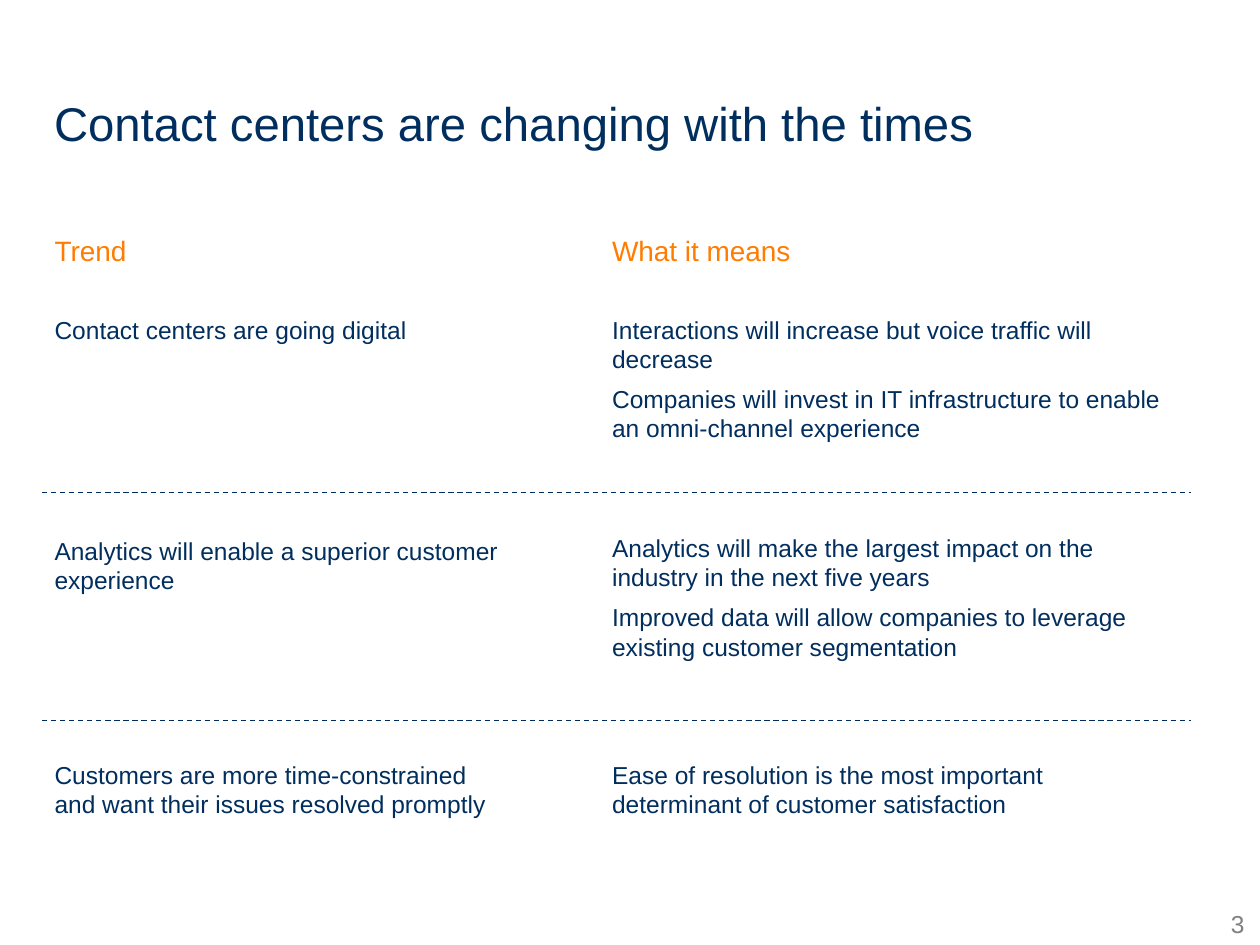
from lxml import etree
from pptx import Presentation
from pptx.dml.color import RGBColor
from pptx.enum.dml import MSO_LINE
from pptx.enum.shapes import MSO_CONNECTOR
from pptx.enum.text import MSO_ANCHOR, PP_ALIGN
from pptx.oxml.ns import qn
from pptx.util import Cm, Pt

DASH = MSO_LINE.DASH
LINE = MSO_CONNECTOR.STRAIGHT
TOP = MSO_ANCHOR.TOP
LEFT, RIGHT = PP_ALIGN.LEFT, PP_ALIGN.RIGHT
NAVY, ORANGE, GREY = "002E5E", "FF7C00", "808080"


def color(code):
    return RGBColor.from_string(code)


def assign(item, values):
    for name, value in values.items():
        setattr(item, name, value)


class Deck:
    font = "Arial"
    rule = "002D5E"

    def __init__(self, width, height):
        self.file = Presentation()
        assign(self.file, {"slide_width": Cm(width), "slide_height": Cm(height)})
        self.slide = self.file.slides.add_slide(self.file.slide_layouts[6])

    def text(self, area, items, size, tint, pitch=None, align=LEFT, wrap=True, inset=None):
        box = self.slide.shapes.add_textbox(*map(Cm, area))
        frame = box.text_frame
        assign(frame, {"word_wrap": wrap, "vertical_anchor": TOP})
        if inset is not None:
            sides = ("left", "top", "right", "bottom")
            assign(frame, {f"margin_{side}": Cm(inset) for side in sides})
        for index, (gap, words) in enumerate(items):
            para = frame.paragraphs[0] if index == 0 else frame.add_paragraph()
            para.text = words
            assign(para, {"alignment": align, "line_spacing": pitch, "space_before": Pt(gap)})
            assign(para.font, {"name": self.font, "size": Pt(size)})
            para.font.color.rgb = color(tint)

    def divide(self, left, right, top):
        line = self.slide.shapes.add_connector(LINE, Cm(left), Cm(top), Cm(right), Cm(top))
        assign(line.line, {"width": Pt(0.75), "dash_style": DASH})
        line.line.color.rgb = color(self.rule)
        etree.SubElement(line._element.spPr, qn("a:effectLst"))


def main():
    deck = Deck(25.4, 19.05)
    deck.text((0.84, 1.9, 20.85, 1.42), [(0, "Contact centers are changing with the times")],
              27, NAVY, 0.9)
    trends = [
        (0, "Contact centers are going digital"),
        (109.5, "Analytics will enable a superior customer experience"),
        (94.5, "Customers are more time-constrained and want their issues resolved promptly"),
    ]
    meanings = [
        (0, "Interactions will increase but voice traffic will decrease"),
        (6, "Companies will invest in IT infrastructure to enable an omni-channel experience"),
        (51.5, "Analytics will make the largest impact on the industry in the next five years"),
        (6, "Improved data will allow companies to leverage existing customer segmentation"),
        (56.5, "Ease of resolution is the most important determinant of customer satisfaction"),
    ]
    columns = [
        (0.85, 6.65, 9.65, "Trend", trends),
        (12.09, 4.65, 11.91, "What it means", meanings),
    ]
    for left, short, wide, head, items in columns:
        deck.text((left, 4.72, short, 1.07), [(0, head)], 16, ORANGE, 0.8)
        deck.text((left, 6.22, wide, 10.24), items, 14, NAVY)
    for top in (9.93, 14.53):
        deck.divide(0.85, 24, top)
    deck.text((24.49, 18.49, 0.6, 0.43), [(0, "3")], 14, GREY, 0.7, RIGHT, False, 0)
    deck.file.save("out.pptx")


if __name__ == "__main__":
    main()
